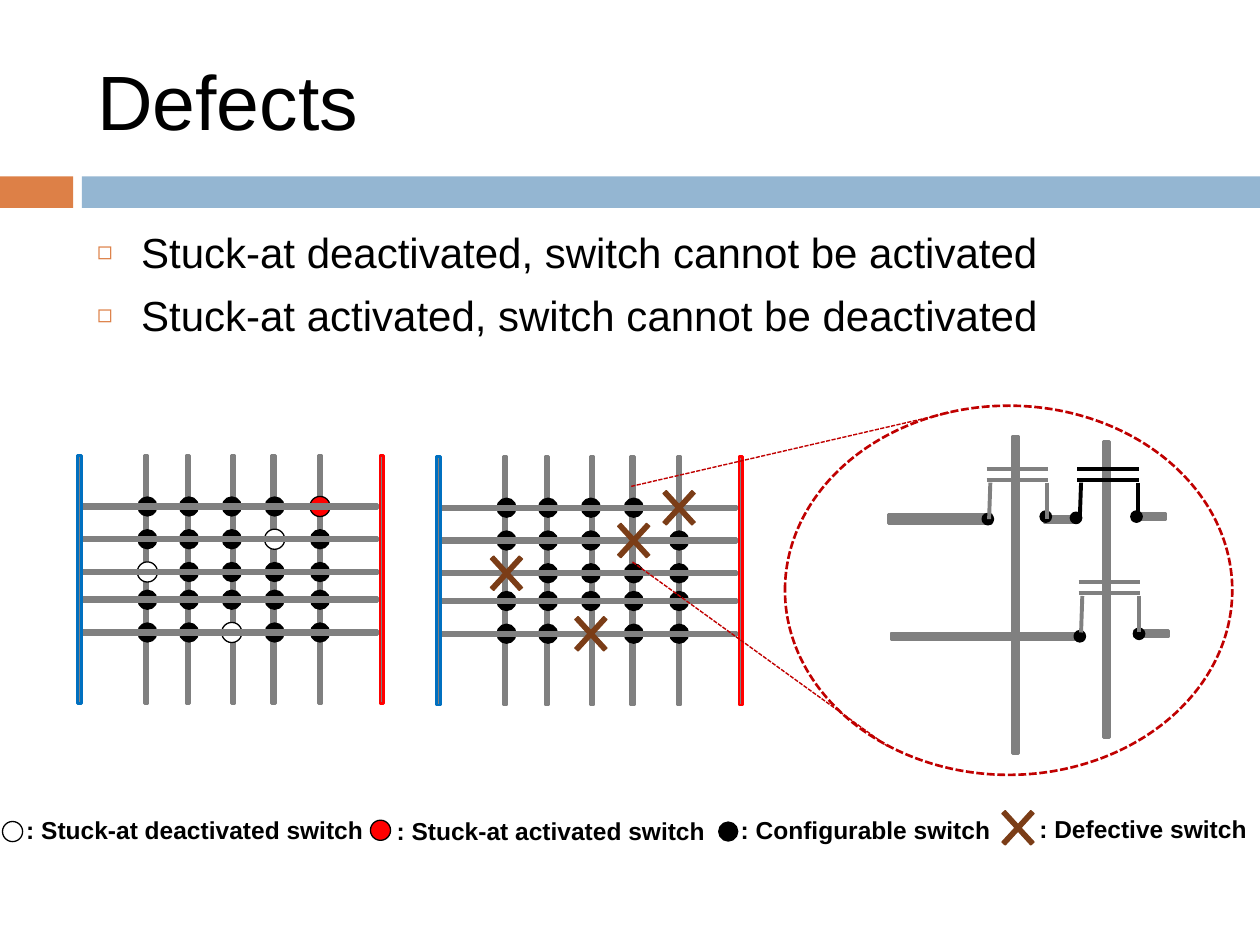
import pptx
import pptx.util
import pptx.dml.color
import pptx.enum.dml
import pptx.enum.shapes
import pptx.enum.text
import pptx.oxml
import pptx.oxml.ns

Inches, Pt = pptx.util.Inches, pptx.util.Pt
SHAPE = pptx.enum.shapes.MSO_SHAPE
COLORS = {
    "orange": "DD8047", "sky": "94B6D2", "black": "000000", "white": "FFFFFF",
    "wire": "808080", "blue": "0070C0", "red": "FF0000", "brown": "7B3D17",
    "zoom": "C00000",
}
TITLE = "Defects"
POINTS = [
    "Stuck-at deactivated, switch cannot be activated",
    "Stuck-at activated, switch cannot be deactivated",
]
BANDS = [("orange", 0, 0.58), ("sky", 0.65, 9.35)]

WIRE_X = [1.17, 1.5, 1.86, 2.18, 2.55]
SWITCH_X = [1.17, 1.5, 1.84, 2.18, 2.54]
WIRE_Y = [4.02, 4.28, 4.54, 4.76, 5.02]
RAILS = [("red", 3.03), ("blue", 0.63)]
# K configurable, O stuck-at deactivated, R stuck-at activated, X defective
LATTICES = [
    ((0, 0), ["KKKKR", "KKKOK", "OKKKK", "KKKKK", "KKOKK"]),
    ((2.85, 0.01), ["KKKKX", "KKKXK", "XKKKK", "KKKKK", "KKXKK"]),
]
SWITCHES = {"K": ("black", 0.14, 1.5), "O": ("white", 0.16, 0.75), "R": ("red", 0.16, 0.75)}

LEGEND = [
    ("O", (0.1, 6.6), ": Stuck-at deactivated switch", (0.11, 6.42, 2.89)),
    ("R", (3.02, 6.59), ": Stuck-at activated switch", (3.05, 6.43, 2.74)),
    ("K", (5.78, 6.6), ": Configurable switch", (5.78, 6.42, 2.19)),
    ("X", (8.08, 6.57), ": Defective switch", (8.15, 6.41, 2.19)),
]

ZOOM_OVAL = (6.23, 3.22, 3.55, 2.93)
ZOOM_RAYS = [((5.01, 3.86), (7.56, 3.27)), ((5.02, 4.46), (7.04, 5.92))]
ZOOM_WIRES = [
    (8.78, 4.68, 2.35, 0.05, 90), (9.12, 4.1, 0.27, 0.05, 180),
    (8.06, 4.72, 2.52, 0.05, 90), (8.42, 4.12, 0.27, 0.05, 180),
    (7.46, 4.12, 0.82, 0.07, 180), (9.14, 5.03, 0.27, 0.05, 180),
    (8.44, 5.05, 0.27, 0.05, 180), (7.7, 5.05, 1.26, 0.05, 180),
]
CONTACTS = [(7.84, 4.12), (8.3, 4.1), (8.54, 4.11), (9.02, 4.1), (9.04, 5.03), (8.57, 5.05)]
GATES = [("wire", 7.83, 3.72), ("black", 8.55, 3.72), ("wire", 8.56, 4.62)]
GATE_STROKES = [
    ((0, 0), (0.49, 0)), ((0, 0.09), (0.49, 0.09)),
    ((0.03, 0.11), (0.02, 0.4)), ((0.48, 0.11), (0.48, 0.4)),
]


def rgb(name):
    return pptx.dml.color.RGBColor.from_string(COLORS[name])


def add_part(slide, kind, box, fill, line=None, width=1.5):
    part = slide.shapes.add_shape(kind, *map(Inches, box))
    part.shadow.inherit = False
    if fill:
        part.fill.solid()
        part.fill.fore_color.rgb = rgb(fill)
    else:
        part.fill.background()
    if line:
        part.line.color.rgb = rgb(line)
        part.line.width = Pt(width)
    else:
        part.line.fill.background()
    return part


def add_centred(slide, kind, x, y, w, h, *style):
    return add_part(slide, kind, (x - w / 2, y - h / 2, w, h), *style)


def add_wire(slide, x, y, length, thickness, angle=0, line="wire"):
    wire = add_centred(slide, SHAPE.RECTANGLE, x, y, length, thickness, "wire", line)
    wire.rotation = angle


def add_switch(slide, state, x, y):
    if state == "X":
        cross = add_centred(slide, SHAPE.MATH_MULTIPLY, x, y, 0.44, 0.48, "brown", "brown", 0.75)
        cross.adjustments[0] = 0.079
    else:
        fill, size, width = SWITCHES[state]
        add_centred(slide, SHAPE.OVAL, x, y, size, size, fill, "black", width)


def add_stroke(slide, start, end, color, width, dashed=False):
    stroke = slide.shapes.add_connector(
        pptx.enum.shapes.MSO_CONNECTOR.STRAIGHT, *map(Inches, start + end))
    stroke.line.color.rgb = rgb(color)
    stroke.line.width = Pt(width)
    if dashed:
        stroke.line.dash_style = pptx.enum.dml.MSO_LINE.SQUARE_DOT
    stroke._element.spPr.append(pptx.oxml.parse_xml(
        f'<a:effectLst {pptx.oxml.ns.nsdecls("a")}/>'))


def write(paragraph, text, size, bold=False):
    paragraph.alignment = pptx.enum.text.PP_ALIGN.LEFT
    run = paragraph.add_run()
    run.text = text
    run.font.name, run.font.size, run.font.bold = "Arial", Pt(size), bold
    run.font.color.rgb = rgb("black")


def add_bullet(paragraph):
    properties = paragraph._p.get_or_add_pPr()
    properties.set("marL", str(Inches(0.35)))
    properties.set("indent", str(Inches(-0.35)))
    for tag in (f'buClr {{}}><a:srgbClr val="{COLORS["orange"]}"/></a:buClr',
                'buSzPct {} val="60000"/', 'buChar {} char="◻"/'):
        properties.append(pptx.oxml.parse_xml(
            "<a:" + tag.format(pptx.oxml.ns.nsdecls("a")) + ">"))


def place(shape, *box):
    shape.left, shape.top, shape.width, shape.height = map(Inches, box)
    frame = shape.text_frame
    frame.word_wrap = True
    frame.auto_size = pptx.enum.text.MSO_AUTO_SIZE.NONE
    return frame


def add_headings(slide):
    for color, left, width in BANDS:
        add_part(slide, SHAPE.RECTANGLE, (left, 1.4, width, 0.25), color)
    title, body = slide.placeholders
    heading = place(title, 0.67, 0.25, 8.92, 1.08)
    heading.vertical_anchor = pptx.enum.text.MSO_ANCHOR.MIDDLE
    write(heading.paragraphs[0], TITLE, 44)
    points = place(body, 0.67, 1.75, 9.25, 1.62)
    for index, point in enumerate(POINTS):
        paragraph = points.add_paragraph() if index else points.paragraphs[0]
        paragraph.space_before = Pt(7)
        write(paragraph, point, 24)
        add_bullet(paragraph)


def add_lattice(slide, offset, rows):
    dx, dy = offset
    for x in WIRE_X:
        add_wire(slide, x + dx - 0.01, 4.6 + dy, 1.97, 0.03, 90)
    switches = [(state, x + dx, y + dy) for y, row in zip(WIRE_Y, rows)
                for x, state in zip(SWITCH_X, row)]
    for switch in switches:
        if switch[0] != "X":
            add_switch(slide, *switch)
    for y in WIRE_Y:
        add_wire(slide, 1.82 + dx, y + dy, 2.35, 0.03)
    for color, x in RAILS:
        add_wire(slide, x + dx, 4.6 + dy, 1.97, 0.03, 90, color)
    for switch in switches:
        if switch[0] == "X":
            add_switch(slide, *switch)


def add_zoom(slide):
    add_part(slide, SHAPE.OVAL, ZOOM_OVAL, None, "zoom").line.dash_style = (
        pptx.enum.dml.MSO_LINE.SQUARE_DOT)
    for wire in ZOOM_WIRES:
        add_wire(slide, *wire)
    for x, y in CONTACTS:
        add_centred(slide, SHAPE.OVAL, x, y, 0.08, 0.08, "black", "black")
    for color, left, top in GATES:
        for (x1, y1), (x2, y2) in GATE_STROKES:
            add_stroke(slide, (left + x1, top + y1), (left + x2, top + y2), color, 2.25)
    for start, end in ZOOM_RAYS:
        add_stroke(slide, start, end, "zoom", 0.79, True)


def main():
    """Build the slide on switch defects."""
    deck = pptx.Presentation()
    deck.slide_width, deck.slide_height = Inches(10), Inches(7.5)
    slide = deck.slides.add_slide(deck.slide_layouts[1])
    add_headings(slide)
    for offset, rows in LATTICES:
        add_lattice(slide, offset, rows)
    for state, centre, label, (left, top, width) in LEGEND:
        add_switch(slide, state, *centre)
        box = (left, top, width, 0.34)
        frame = place(slide.shapes.add_textbox(*map(Inches, box)), *box)
        write(frame.paragraphs[0], label, 14, True)
    add_zoom(slide)
    deck.save("out.pptx")


if __name__ == "__main__":
    main()
